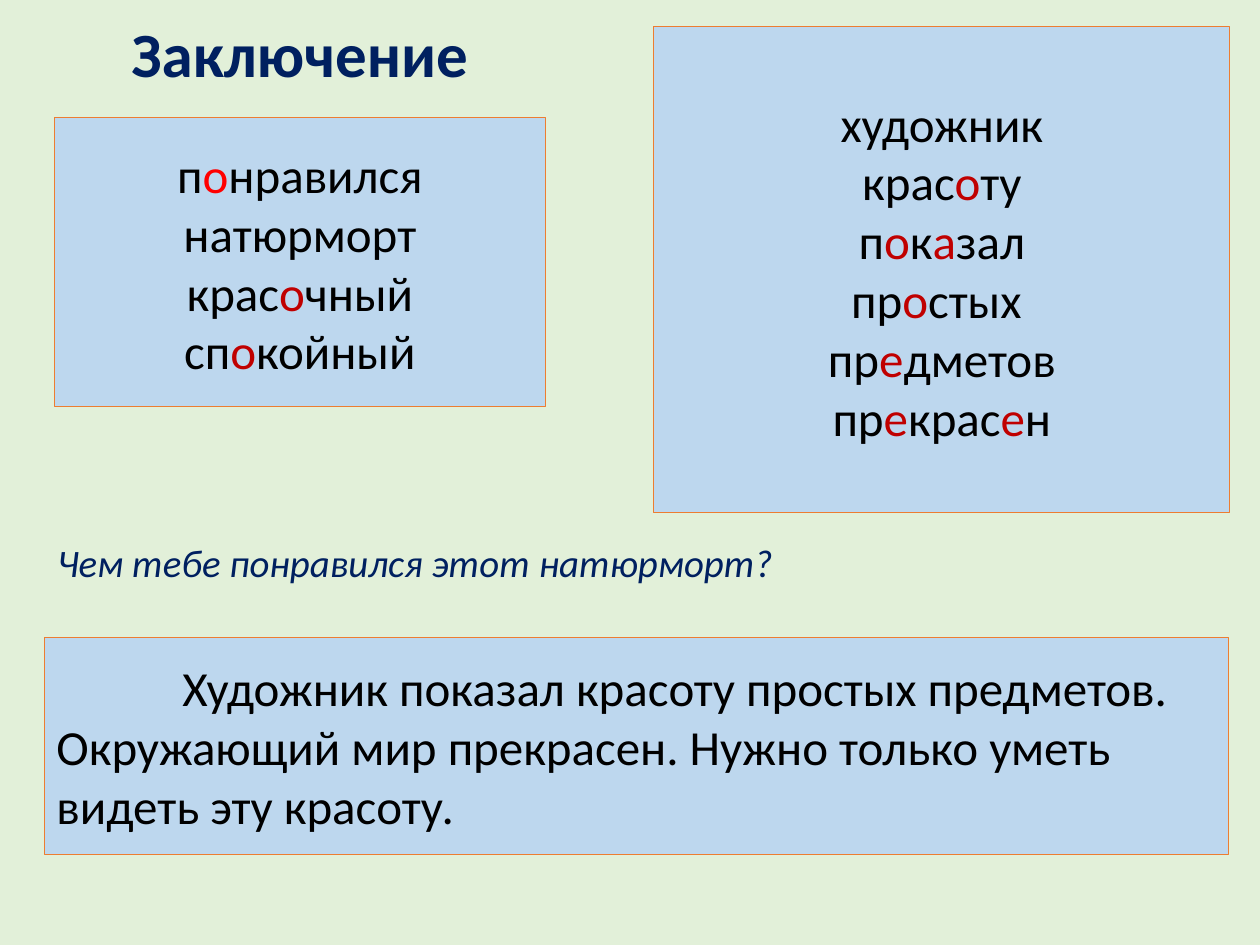
from pptx import Presentation
from pptx.dml.color import RGBColor
from pptx.enum.shapes import MSO_SHAPE
from pptx.enum.text import MSO_ANCHOR as Anchor, PP_ALIGN as Align
from pptx.util import Inches, Pt

RED, DARK_RED = "FF0000", "C00000"


def colour(value):
    return RGBColor.from_string(value)


class SlideBuilder:
    font_name = "Calibri"
    background, panel_fill, panel_line = "E2F0D9", "BDD7EE", "ED7D31"
    text_colour, heading_colour = "000000", "002060"
    panel_size = 28

    def __init__(self, presentation):
        self.slide = presentation.slides.add_slide(presentation.slide_layouts[6])
        fill = self.slide.background.fill
        fill.solid()
        fill.fore_color.rgb = colour(self.background)

    def style_run(self, run, size, text_colour, bold=False, italic=False):
        font = run.font
        font.name, font.size = self.font_name, Pt(size)
        font.bold, font.italic = bold, italic
        font.color.rgb = colour(text_colour)

    def heading(self, text, left, top, width, height, size, anchor, **emphasis):
        box = self.slide.shapes.add_textbox(
            Inches(left), Inches(top), Inches(width), Inches(height))
        frame = box.text_frame
        frame.word_wrap = True
        frame.vertical_anchor = anchor
        frame.text = text
        paragraph = frame.paragraphs[0]
        paragraph.alignment = Align.CENTER
        paragraph.line_spacing = 0.9
        self.style_run(paragraph.runs[0], size, self.heading_colour, **emphasis)

    def panel(self, left, top, width, height):
        shape = self.slide.shapes.add_shape(
            MSO_SHAPE.RECTANGLE, Inches(left), Inches(top), Inches(width), Inches(height))
        shape.shadow.inherit = False
        shape.fill.solid()
        shape.fill.fore_color.rgb = colour(self.panel_fill)
        shape.line.color.rgb = colour(self.panel_line)
        shape.line.width = Pt(0.5)
        frame = shape.text_frame
        frame.word_wrap = True
        frame.vertical_anchor = Anchor.MIDDLE
        return frame

    def word_panel(self, words, *place):
        """Lists (word, accent colour) pairs; letters between asterisks take the accent."""
        frame = self.panel(*place)
        for index, (word, accent) in enumerate(words):
            paragraph = frame.add_paragraph() if index else frame.paragraphs[0]
            paragraph.alignment = Align.CENTER
            for position, part in enumerate(word.split("*")):
                run = paragraph.add_run()
                run.text = part
                self.style_run(run, self.panel_size,
                               accent if position % 2 else self.text_colour)

    def text_panel(self, text, first_indent, *place):
        frame = self.panel(*place)
        frame.text = text
        paragraph = frame.paragraphs[0]
        paragraph.alignment = Align.LEFT
        properties = paragraph._p.get_or_add_pPr()
        properties.set("marL", "0")
        properties.set("indent", str(Inches(first_indent)))
        self.style_run(paragraph.runs[0], self.panel_size, self.text_colour)


def main():
    presentation = Presentation()
    presentation.slide_width, presentation.slide_height = Inches(10), Inches(7.5)
    builder = SlideBuilder(presentation)

    builder.heading("Заключение", 0.35, 0.18, 4.06, 0.55, 36, Anchor.MIDDLE, bold=True)
    builder.heading("Чем тебе понравился этот натюрморт?",
                    0.35, 4.27, 5.89, 0.55, 22.2, Anchor.TOP, italic=True)

    impressions = [("п*о*нравился", RED), ("натюрморт", DARK_RED),
                   ("крас*о*чный", DARK_RED), ("сп*о*койный", DARK_RED)]
    builder.word_panel(impressions, 0.43, 0.93, 3.9, 2.3)

    conclusion_words = ["художник", "крас*о*ту", "п*о*к*а*зал",
                        "пр*о*стых ", "пр*е*дметов", "пр*е*крас*е*н"]
    builder.word_panel([(word, DARK_RED) for word in conclusion_words],
                       5.19, 0.21, 4.57, 3.86)

    builder.text_panel("Художник показал красоту простых предметов. Окружающий мир "
                       "прекрасен. Нужно только уметь видеть эту красоту.",
                       1, 0.35, 5.06, 9.4, 1.72)

    presentation.save("out.pptx")


if __name__ == "__main__":
    main()
